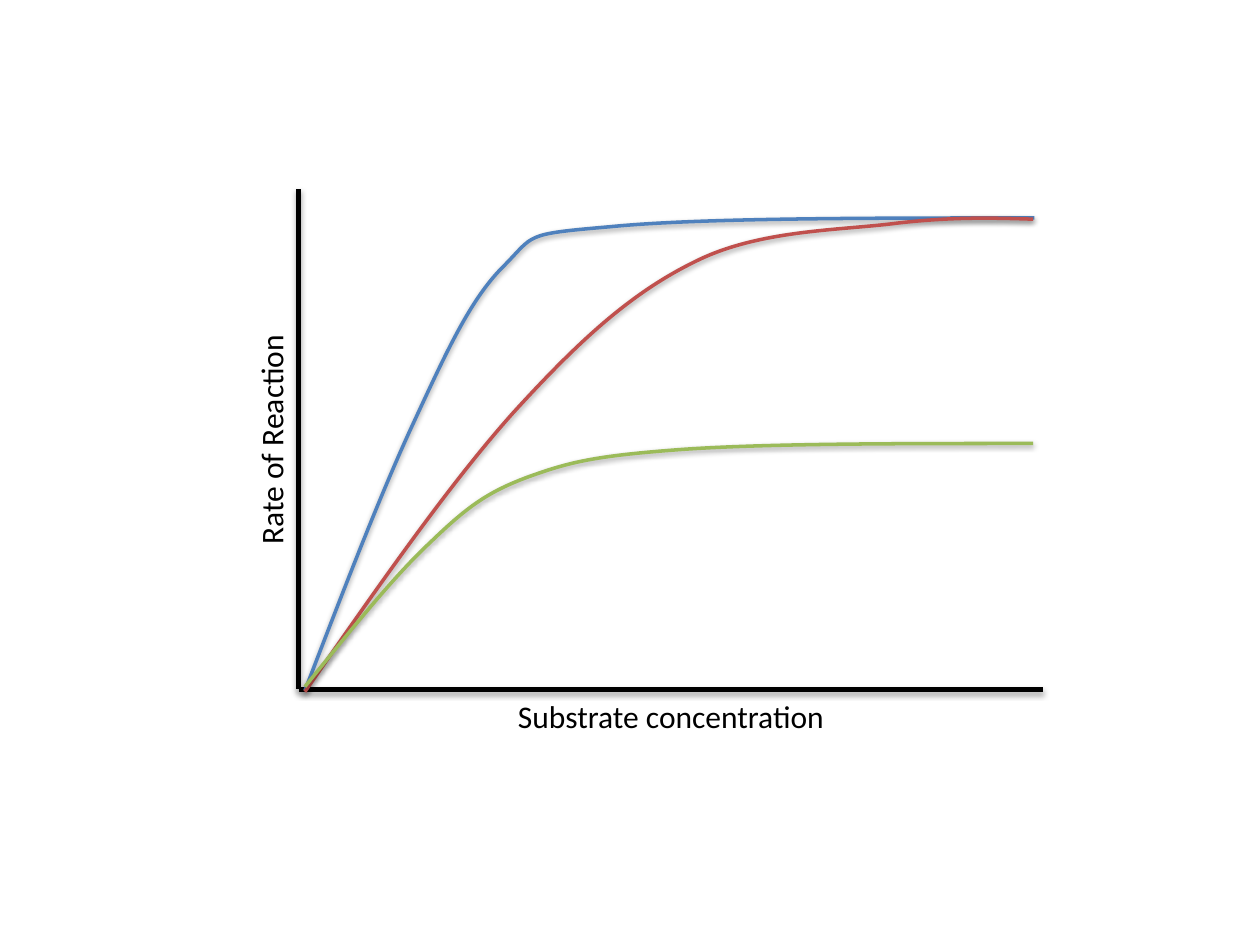
import pptx
import pptx.util
import pptx.dml.color
import pptx.enum.shapes
import pptx.enum.text
import pptx.oxml
import pptx.oxml.ns
from pptx.util import Inches

COLORS = {"axis": "000000", "text": "000000", "uninhibited": "4F81BD",
          "competitive": "C0504D", "noncompetitive": "9BBB59"}


def style_line(sp, color, width, distance, opacity):
    """Set the stroke and a soft shadow straight below it."""
    sp.line.color.rgb = pptx.dml.color.RGBColor.from_string(color)
    sp.line.width = pptx.util.Pt(width)
    sp._element.spPr.append(pptx.oxml.parse_xml(
        f'<a:effectLst {pptx.oxml.ns.nsdecls("a")}>'
        f'<a:outerShdw blurRad="40000" dist="{distance}" dir="5400000" rotWithShape="0">'
        f'<a:srgbClr val="000000"><a:alpha val="{opacity * 1000}"/></a:srgbClr>'
        '</a:outerShdw></a:effectLst>'))


def add_curve(shapes, points, color):
    """Draw a Bezier curve: a start point, then three points per segment."""
    builder = shapes.build_freeform(Inches(points[0][0]), Inches(points[0][1]))
    builder.add_line_segments([(Inches(x), Inches(y)) for x, y in points[1:]], close=False)
    sp = builder.convert_to_shape()
    sp.fill.background()
    lines = sp._element.findall(".//" + pptx.oxml.ns.qn("a:lnTo"))
    for i in range(0, len(lines), 3):
        bezier = pptx.oxml.parse_xml(f'<a:cubicBezTo {pptx.oxml.ns.nsdecls("a")}/>')
        lines[i].addprevious(bezier)
        for line in lines[i:i + 3]:
            bezier.append(line[0])
            line.getparent().remove(line)
    style_line(sp, color, 2, 20000, 38)


prs = pptx.Presentation()
prs.slide_width, prs.slide_height = Inches(10), Inches(7.5)
s = prs.slides.add_slide(prs.slide_layouts[6])
graph = s.shapes.add_group_shape().shapes

# Axes
left, top, right, bottom = 2.37, 1.5, 8.28, 5.47
for x1, y1, x2, y2 in [(left, top, left, bottom), (left, bottom, right, bottom)]:
    axis = graph.add_connector(pptx.enum.shapes.MSO_CONNECTOR.STRAIGHT,
                               Inches(x1), Inches(y1), Inches(x2), Inches(y2))
    style_line(axis, COLORS["axis"], 3, 23000, 35)

add_curve(graph, [
    (2.42, 5.48), (2.72, 4.7), (3.02, 3.92), (3.28, 3.36),
    (3.54, 2.8), (3.73, 2.38), (3.99, 2.12),
    (4.25, 1.86), (4.14, 1.86), (4.84, 1.8),
    (5.54, 1.73), (6.88, 1.73), (8.21, 1.73)], COLORS["uninhibited"])

# Axis labels
for label, x, y, w, h, rotation in [
        ("Substrate concentration", left, 5.48, right - left, 1.63, 0),
        ("Rate of Reaction", -0.25, 2.98, 5.42, 1.02, 270)]:
    tb = graph.add_textbox(Inches(x), Inches(y), Inches(w), Inches(h))
    tb.rotation = rotation
    tf = tb.text_frame
    tf.word_wrap = True
    tf.text = label
    p = tf.paragraphs[0]
    p.alignment = pptx.enum.text.PP_ALIGN.CENTER
    font = p.runs[0].font
    font.name, font.size = "Calibri", pptx.util.Pt(18)
    font.color.rgb = pptx.dml.color.RGBColor.from_string(COLORS["text"])

add_curve(s.shapes, [
    (2.42, 5.49), (2.99, 4.67), (3.56, 3.85), (4.07, 3.28),
    (4.59, 2.71), (5, 2.33), (5.51, 2.08),
    (6.02, 1.82), (6.68, 1.83), (7.13, 1.77),
    (7.57, 1.72), (7.89, 1.73), (8.2, 1.74)], COLORS["competitive"])
add_curve(s.shapes, [
    (2.42, 5.45), (2.77, 5.02), (3.12, 4.58), (3.41, 4.31),
    (3.7, 4.03), (3.86, 3.91), (4.18, 3.79),
    (4.51, 3.67), (4.71, 3.62), (5.38, 3.57),
    (6.05, 3.52), (7.13, 3.52), (8.2, 3.52)], COLORS["noncompetitive"])

prs.save("out.pptx")
